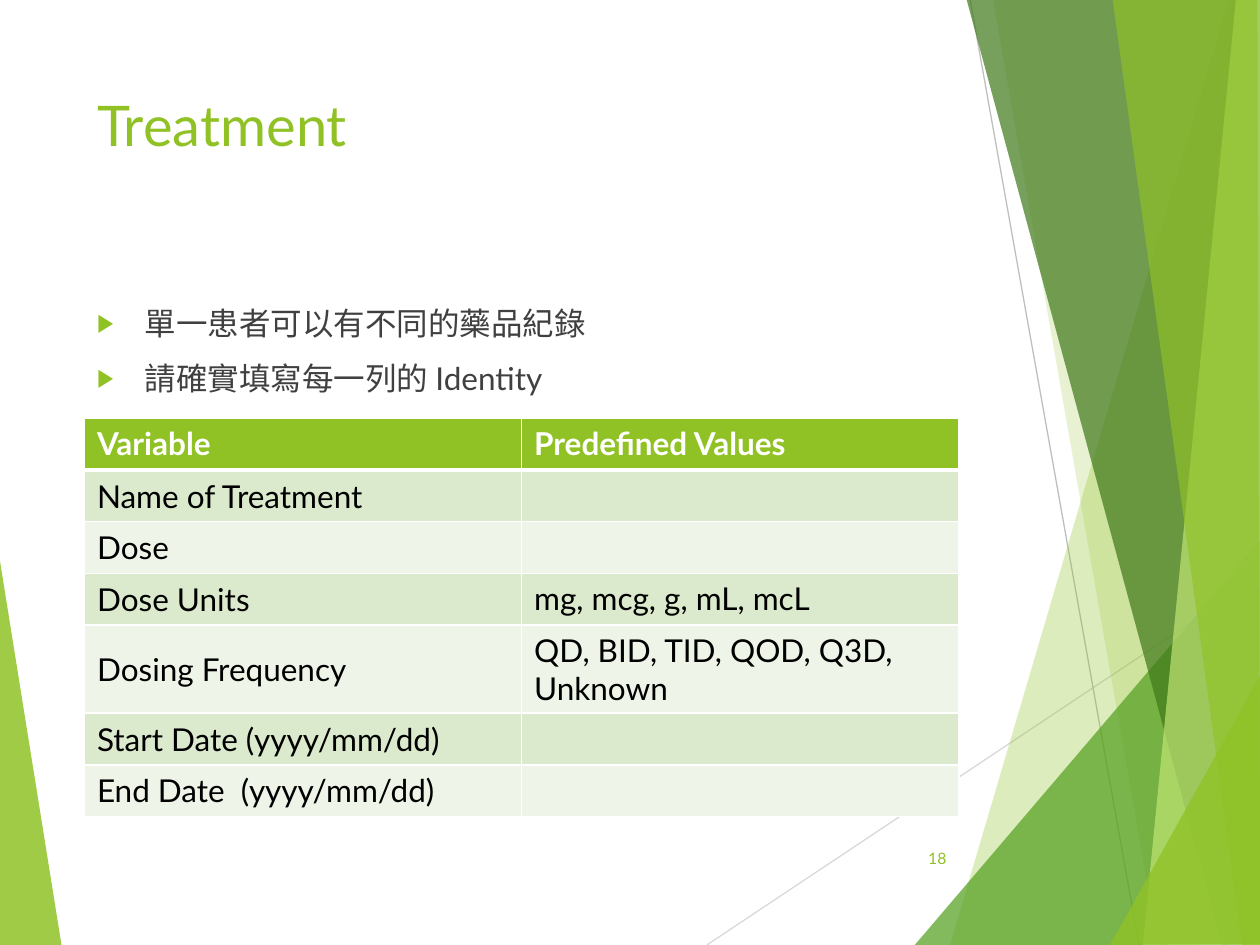
from lxml.etree import SubElement
from pptx import Presentation
from pptx.dml.color import RGBColor
from pptx.enum.shapes import MSO_CONNECTOR as Connector
from pptx.enum.text import MSO_ANCHOR as Anchor, MSO_AUTO_SIZE as AutoSize, PP_ALIGN as Align
from pptx.oxml import parse_xml
from pptx.oxml.ns import nsdecls, qn
from pptx.util import Pt

PX = 9144  # 100 px to the inch
FONT = "Lato"
GREEN = RGBColor(0x90, 0xC2, 0x26)
MID_GREEN = RGBColor(0x54, 0xA0, 0x21)
DARK_GREEN = RGBColor(0x3F, 0x78, 0x19)
LIME = RGBColor(0xC0, 0xE4, 0x74)
BAND_DARK = RGBColor(0xDB, 0xE9, 0xCD)
BAND_LIGHT = RGBColor(0xEE, 0xF4, 0xE8)
GREY = RGBColor(0x40, 0x40, 0x40)
LINE_LIGHT = RGBColor(0xD9, 0xD9, 0xD9)
LINE_GREY = RGBColor(0xBF, 0xBF, 0xBF)
WHITE = RGBColor(0xFF, 0xFF, 0xFF)
BLACK = RGBColor(0, 0, 0)

# Corner points, colour, opacity in percent
LEFT_FACET = ([(-1, 439), (49, 751), (-1, 750)], GREEN, 85)
RIGHT_FACETS = [
    ([(975, 0), (754, 750), (1002, 751), (1001, 1)], GREEN, 30),
    ([(788, -1), (919, 750), (1001, 750), (1001, -1)], GREEN, 20),
    ([(726, 750), (1000, 429), (1001, 750)], MID_GREEN, 72),
    ([(767, -1), (970, 750), (1001, 749), (1001, -1)], DARK_GREEN, 70),
    ([(981, -1), (907, 750), (1001, 750), (1000, -1)], LIME, 70),
    ([(883, -1), (986, 750), (1000, 750), (998, -1)], GREEN, 65),
    ([(881, 750), (1001, 535), (1001, 749)], GREEN, 80),
]
THIN_LINES = [
    ((561, 750), (1001, 457), LINE_LIGHT),
    ((770, 0), (904, 750), LINE_GREY),
]
BULLETS = ["單一患者可以有不同的藥品紀錄", "請確實填寫每一列的 Identity"]
ROWS = [
    ("Variable", "Predefined Values"),
    ("Name of Treatment", ""),
    ("Dose", ""),
    ("Dose Units", "mg, mcg, g, mL, mcL"),
    ("Dosing Frequency", "QD, BID, TID, QOD, Q3D, Unknown"),
    ("Start Date (yyyy/mm/dd)", ""),
    ("End Date  (yyyy/mm/dd)", ""),
]


def px(*lengths):
    return [length * PX for length in lengths]


def place(shape, left, top, width, height):
    shape.left, shape.top, shape.width, shape.height = px(left, top, width, height)


def format_para(para, size, color, bold=False, align=Align.LEFT):
    para.alignment = align
    for span in para.runs:
        span.font.name = FONT
        span.font.size = Pt(size)
        span.font.bold = bold
        span.font.color.rgb = color


def add_facet(page, points, color, opacity):
    builder = page.shapes.build_freeform(*points[0], scale=PX)
    builder.add_line_segments(points[1:], close=True)
    facet = builder.convert_to_shape()
    facet.shadow.inherit = False
    facet.line.fill.background()
    facet.fill.solid()
    facet.fill.fore_color.rgb = color
    color_node = facet.fill._xPr.find(".//" + qn("a:srgbClr"))
    SubElement(color_node, qn("a:alpha"), val=str(opacity * 1000))


def add_thin_line(page, start, end, color):
    line = page.shapes.add_connector(Connector.STRAIGHT, *px(*start, *end))
    line.line.color.rgb = color
    line.line.width = Pt(0.75)
    SubElement(line._element.spPr, qn("a:effectLst"))


def fill_title(title, text):
    place(title, 67, 67, 694, 144)
    frame = title.text_frame
    frame.text = text
    frame.auto_size = AutoSize.NONE
    frame.vertical_anchor = Anchor.TOP
    format_para(frame.paragraphs[0], 32, GREEN)


def fill_bullets(body, lines):
    place(body, 67, 236, 694, 424)
    frame = body.text_frame
    frame.text = "\n".join(lines)
    frame.auto_size = AutoSize.NONE
    frame.vertical_anchor = Anchor.TOP
    for para in frame.paragraphs:
        format_para(para, 18, GREY)
        para.space_before = Pt(10)
        props = para._p.get_or_add_pPr()
        props.set("marL", str(38 * PX))
        props.set("indent", str(-38 * PX))
        bullet_color = SubElement(props, qn("a:buClr"))
        SubElement(bullet_color, qn("a:srgbClr"), val=str(GREEN))
        SubElement(props, qn("a:buSzPct"), val="80000")
        SubElement(props, qn("a:buFont"), typeface="Arial")
        SubElement(props, qn("a:buChar"), char="▶")


def set_borders(cell, bottom):
    props = cell._tc.get_or_add_tcPr()
    widths = {"lnL": 1, "lnR": 1, "lnT": 1, "lnB": bottom}
    for index, (side, width) in enumerate(widths.items()):
        props.insert(index, parse_xml(
            f'<a:{side} {nsdecls("a")} w="{Pt(width)}"><a:solidFill>'
            f'<a:srgbClr val="{WHITE}"/></a:solidFill></a:{side}>'))


def add_variable_table(page, rows):
    table = page.shapes.add_table(
        len(rows), 2, *px(67, 332, 694, 41 * len(rows))).table
    for row_index, texts in enumerate(rows):
        header = row_index == 0
        band = GREEN if header else BAND_DARK if row_index % 2 else BAND_LIGHT
        for column, text in enumerate(texts):
            cell = table.cell(row_index, column)
            cell.text = text
            cell.fill.solid()
            cell.fill.fore_color.rgb = band
            if column == 0 and not header:
                cell.vertical_anchor = Anchor.MIDDLE
            format_para(cell.text_frame.paragraphs[0], 18,
                        WHITE if header else BLACK, bold=header)
            # The rule under the header, shared with the first data row, is thick
            set_borders(cell, 3 if header else 1)


def add_page_number(page, number):
    box = page.shapes.add_textbox(*px(705, 661, 56, 40))
    frame = box.text_frame
    frame.word_wrap = True
    frame.vertical_anchor = Anchor.MIDDLE
    frame.text = number
    format_para(frame.paragraphs[0], 9, GREEN, align=Align.RIGHT)


def main():
    deck = Presentation()
    deck.slide_width, deck.slide_height = px(1000, 750)
    page = deck.slides.add_slide(deck.slide_layouts[1])

    # Background facets and thin lines
    add_facet(page, *LEFT_FACET)
    for line in THIN_LINES:
        add_thin_line(page, *line)
    for facet in RIGHT_FACETS:
        add_facet(page, *facet)

    # Content
    fill_title(page.shapes.title, "Treatment")
    fill_bullets(page.placeholders[1], BULLETS)
    add_page_number(page, "18")
    add_variable_table(page, ROWS)

    deck.save("out.pptx")


if __name__ == "__main__":
    main()
